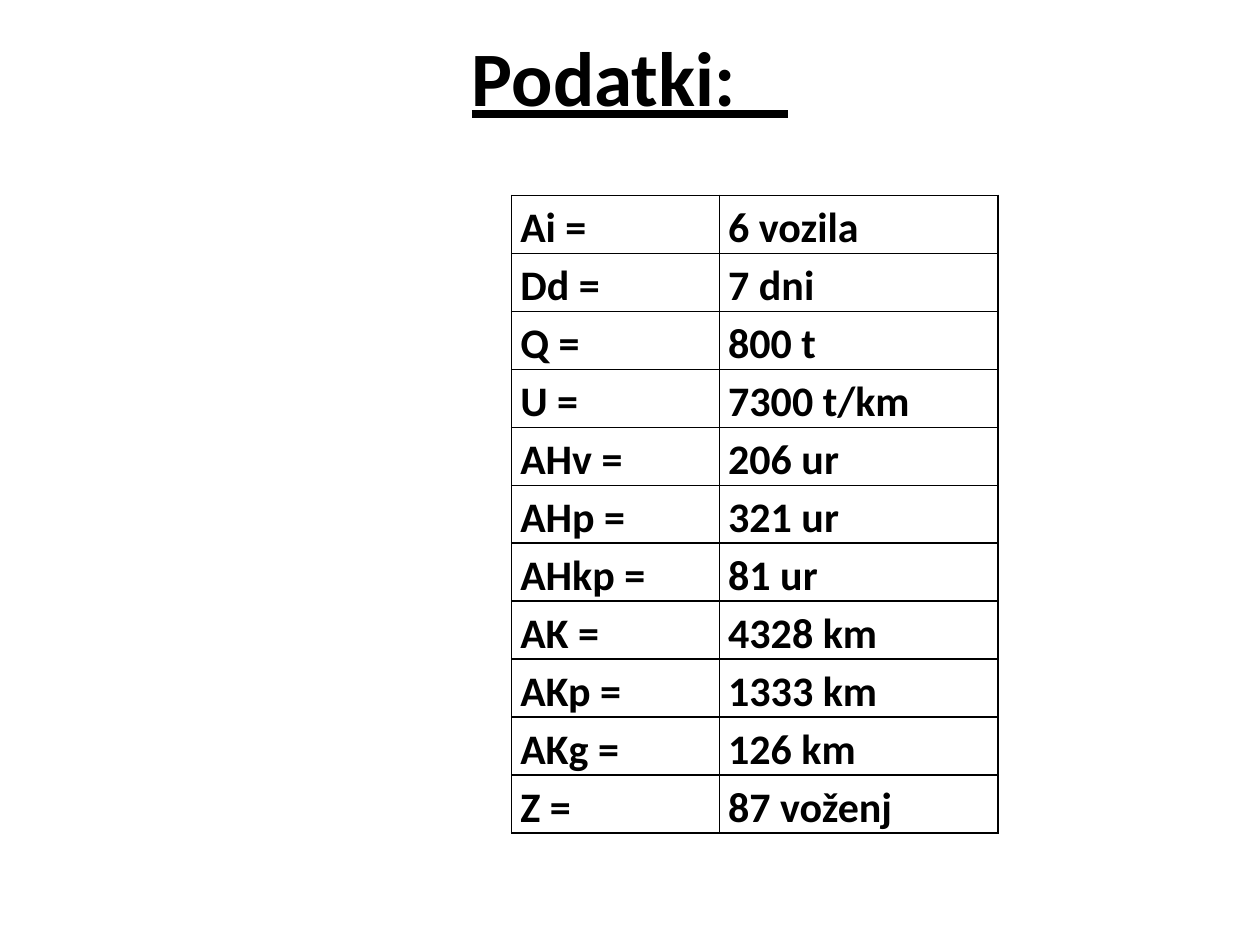
from dataclasses import dataclass

from lxml.etree import SubElement
from pptx import Presentation
from pptx.dml.color import RGBColor
from pptx.enum.text import MSO_ANCHOR, PP_ALIGN
from pptx.oxml.ns import qn
from pptx.util import Inches, Pt


@dataclass(frozen=True)
class Theme:
    font: str = "Calibri"
    ink: str = "000000"
    title_size: int = 44
    cell_size: int = 24
    border_width: int = 1


THEME = Theme()

TITLE = "Podatki:   "
DATA = [
    ("Ai =", "6 vozila"),
    ("Dd =", "7 dni"),
    ("Q =", "800 t"),
    ("U =", "7300 t/km"),
    ("AHv =", "206 ur"),
    ("AHp =", "321 ur"),
    ("AHkp =", "81 ur"),
    ("AK =", "4328 km"),
    ("AKp =", "1333 km"),
    ("AKg =", "126 km"),
    ("Z =", "87 voženj"),
]
COLUMN_WIDTHS = (1.65, 2.21)
ROW_HEIGHT = 0.43


def write_text(tf, text, *, size, align=PP_ALIGN.LEFT, underline=False, spacing=1.0):
    p = tf.paragraphs[0]
    p.alignment = align
    p.line_spacing = spacing
    r = p.add_run()
    r.text = text
    r.font.name = THEME.font
    r.font.size = Pt(size)
    r.font.bold = True
    r.font.underline = underline
    r.font.color.rgb = RGBColor.from_string(THEME.ink)


def add_title(s):
    sp = s.shapes.add_textbox(Inches(0.5), Inches(0.3), Inches(9), Inches(1.25))
    tf = sp.text_frame
    tf.word_wrap = True
    tf.vertical_anchor = MSO_ANCHOR.MIDDLE
    tf.margin_bottom = Inches(0.7)  # raises the line above the box's middle
    write_text(tf, TITLE, size=THEME.title_size, align=PP_ALIGN.CENTER, underline=True)


def add_borders(cell):
    """Draw all four cell edges; they must precede the fill in tcPr."""
    props = cell._tc.get_or_add_tcPr()
    for edge in ("a:lnL", "a:lnR", "a:lnT", "a:lnB"):
        line = SubElement(props, qn(edge), w=str(Pt(THEME.border_width)))
        fill = SubElement(line, qn("a:solidFill"))
        SubElement(fill, qn("a:srgbClr"), val=THEME.ink)


def format_cell(cell, text):
    add_borders(cell)
    cell.fill.background()
    cell.margin_left = cell.margin_right = Inches(0.07)
    cell.margin_top = cell.margin_bottom = 0
    write_text(cell.text_frame, text, size=THEME.cell_size, spacing=1.15)


def add_data_table(s):
    frame = s.shapes.add_table(
        len(DATA), len(COLUMN_WIDTHS), Inches(4.06), Inches(1.55),
        Inches(sum(COLUMN_WIDTHS)), Inches(ROW_HEIGHT * len(DATA)),
    )
    table = frame.table
    table.first_row = table.horz_banding = False
    for column, width in zip(table.columns, COLUMN_WIDTHS):
        column.width = Inches(width)
    for row, values in zip(table.rows, DATA):
        row.height = Inches(ROW_HEIGHT)
        for cell, text in zip(row.cells, values):
            format_cell(cell, text)


def main():
    prs = Presentation()
    prs.slide_width, prs.slide_height = Inches(10), Inches(7.5)
    s = prs.slides.add_slide(prs.slide_layouts[6])
    add_title(s)
    add_data_table(s)
    prs.save("out.pptx")


if __name__ == "__main__":
    main()
